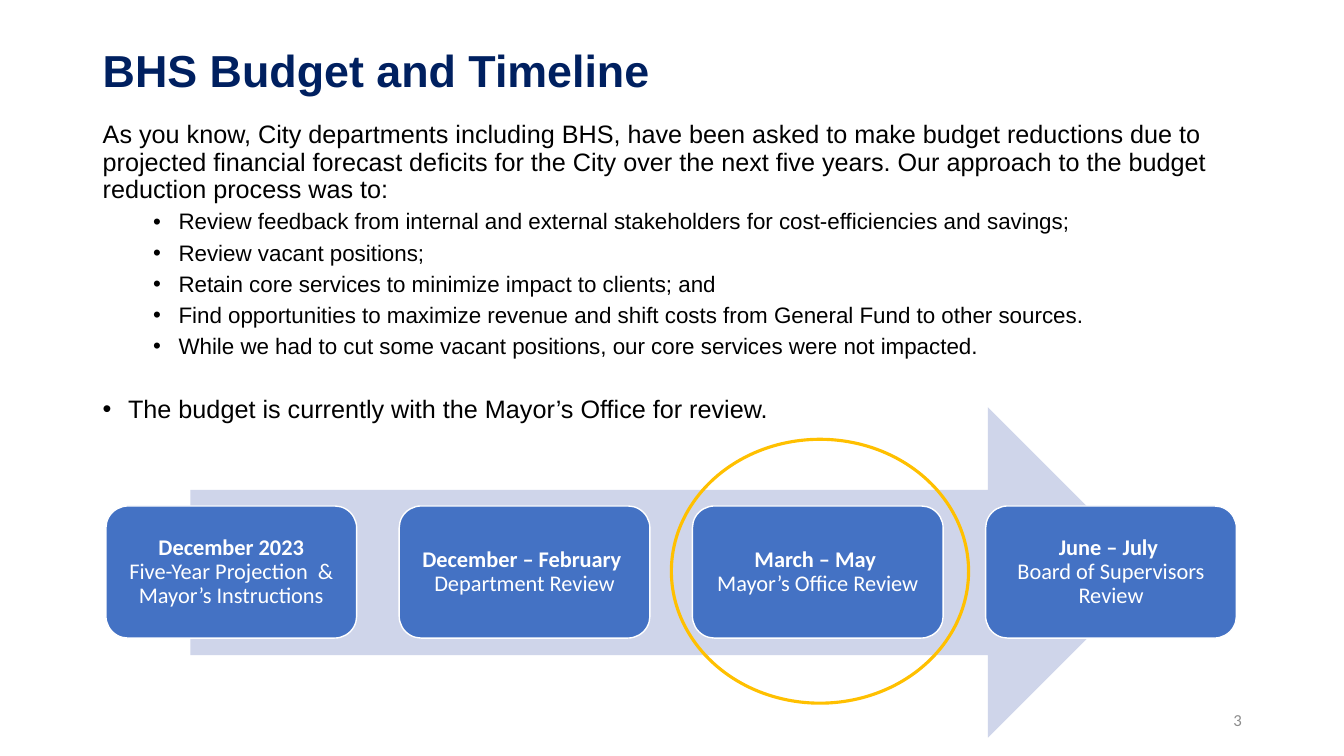
from lxml import etree
from pptx import Presentation
from pptx.dml.color import RGBColor
from pptx.enum.shapes import MSO_SHAPE
from pptx.enum.text import MSO_ANCHOR, PP_ALIGN
from pptx.oxml.ns import qn
from pptx.util import Cm, Pt

ARROW = MSO_SHAPE.RIGHT_ARROW
CARD = MSO_SHAPE.ROUNDED_RECTANGLE
RING = MSO_SHAPE.OVAL
TOP, MIDDLE = MSO_ANCHOR.TOP, MSO_ANCHOR.MIDDLE
LEFT, CENTER, RIGHT = PP_ALIGN.LEFT, PP_ALIGN.CENTER, PP_ALIGN.RIGHT

COLORS = {
    "navy": "002060",
    "black": "000000",
    "white": "FFFFFF",
    "gray": "8C8C8C",
    "blue": "4472C4",
    "pale": "CFD5EA",
    "gold": "FFC000",
}

INTRO = (
    "As you know, City departments including BHS, have been asked to make budget "
    "reductions due to projected financial forecast deficits for the City over the "
    "next five years. Our approach to the budget reduction process was to:"
)
APPROACH = [
    "Review feedback from internal and external stakeholders for cost-efficiencies and savings;",
    "Review vacant positions;",
    "Retain core services to minimize impact to clients; and",
    "Find opportunities to maximize revenue and shift costs from General Fund to other sources.",
    "While we had to cut some vacant positions, our core services were not impacted.",
]
STATUS = "The budget is currently with the Mayor’s Office for review."
STAGES = [
    ("December 2023", "Five-Year Projection  & Mayor’s Instructions"),
    ("December – February ", "Department Review"),
    ("March – May ", "Mayor’s Office Review"),
    ("June – July ", "Board of Supervisors Review"),
]

CARD_LEFT, CARD_TOP, CARD_STEP = 2.67, 12.75, 7.39
CARD_WIDTH, CARD_HEIGHT = 6.32, 3.33


def apply_format(target, values):
    for name, value in values.items():
        setattr(target, name, value)


def add_run(paragraph, text, size, color, font="Arial", bold=False):
    run = paragraph.add_run()
    run.text = text
    apply_format(run.font, {"name": font, "size": Pt(size), "bold": bold})
    run.font.color.rgb = RGBColor.from_string(COLORS[color])


def add_bullet(paragraph, indent):
    properties = paragraph._p.get_or_add_pPr()
    properties.set("marL", str(Cm(indent)))
    properties.set("indent", str(-Cm(0.64)))
    etree.SubElement(properties, qn("a:buFont")).set("typeface", "Arial")
    etree.SubElement(properties, qn("a:buChar")).set("char", "•")


def add_text_frame(slide, left, top, width, height, anchor):
    box = slide.shapes.add_textbox(Cm(left), Cm(top), Cm(width), Cm(height))
    apply_format(box.text_frame, {"word_wrap": True, "vertical_anchor": anchor})
    return box.text_frame


def add_label(slide, text, place, align, **run_format):
    paragraph = add_text_frame(slide, *place, MIDDLE).paragraphs[0]
    apply_format(paragraph, {"alignment": align, "line_spacing": 0.9})
    add_run(paragraph, text, **run_format)


def add_figure(slide, kind, left, top, width, height, fill=None, line=None, weight=1):
    figure = slide.shapes.add_shape(kind, Cm(left), Cm(top), Cm(width), Cm(height))
    figure.shadow.inherit = False
    if fill:
        figure.fill.solid()
        figure.fill.fore_color.rgb = RGBColor.from_string(COLORS[fill])
    else:
        figure.fill.background()
    if line:
        figure.line.color.rgb = RGBColor.from_string(COLORS[line])
        figure.line.width = Pt(weight)
    else:
        figure.line.fill.background()
    return figure


def add_stage(slide, index, period, task):
    card = add_figure(slide, CARD, CARD_LEFT + index * CARD_STEP, CARD_TOP,
                      CARD_WIDTH, CARD_HEIGHT, "blue", "white")
    inset = Cm(0.33)
    apply_format(card.text_frame, {
        "word_wrap": True, "vertical_anchor": MIDDLE,
        "margin_left": inset, "margin_right": inset,
        "margin_top": inset, "margin_bottom": inset,
    })
    paragraph = card.text_frame.paragraphs[0]
    apply_format(paragraph, {"alignment": CENTER, "line_spacing": 0.9})
    add_run(paragraph, period, 16, "white", "Calibri", bold=True)
    paragraph.add_line_break()
    add_run(paragraph, task, 16, "white", "Calibri")


def add_body(slide):
    frame = add_text_frame(slide, 2.34, 2.95, 29.21, 12.09, TOP)
    # Text, size, space before, bullet indent
    entries = [(INTRO, 18, 10, None)]
    entries += [(step, 16, 5, 1.91) for step in APPROACH]
    entries.append((STATUS, 18, 26.5, 0.64))
    for index, (text, size, space, indent) in enumerate(entries):
        paragraph = frame.add_paragraph() if index else frame.paragraphs[0]
        apply_format(paragraph, {
            "alignment": LEFT, "line_spacing": 0.9, "space_before": Pt(space),
        })
        if indent:
            add_bullet(paragraph, indent)
        add_run(paragraph, text, size, "black")


def main():
    presentation = Presentation()
    apply_format(presentation, {"slide_width": Cm(33.87), "slide_height": Cm(19.05)})
    slide = presentation.slides.add_slide(presentation.slide_layouts[6])

    # Title and page number
    add_label(slide, "BHS Budget and Timeline", (2.34, 0, 29.21, 3.68), LEFT,
              size=32, color="navy", bold=True)
    add_label(slide, "3", (23.93, 17.65, 7.62, 1.02), RIGHT,
              size=12, color="gray", font="Calibri")

    # Timeline with the current stage ringed
    add_figure(slide, ARROW, 4.8, 10.26, 24.26, 8.33, "pale")
    for index, (period, task) in enumerate(STAGES):
        add_stage(slide, index, period, task)
    add_figure(slide, RING, 16.92, 11.07, 7.49, 6.65, line="gold", weight=2.25)

    # Explanation
    add_body(slide)
    presentation.save("out.pptx")


if __name__ == "__main__":
    main()
